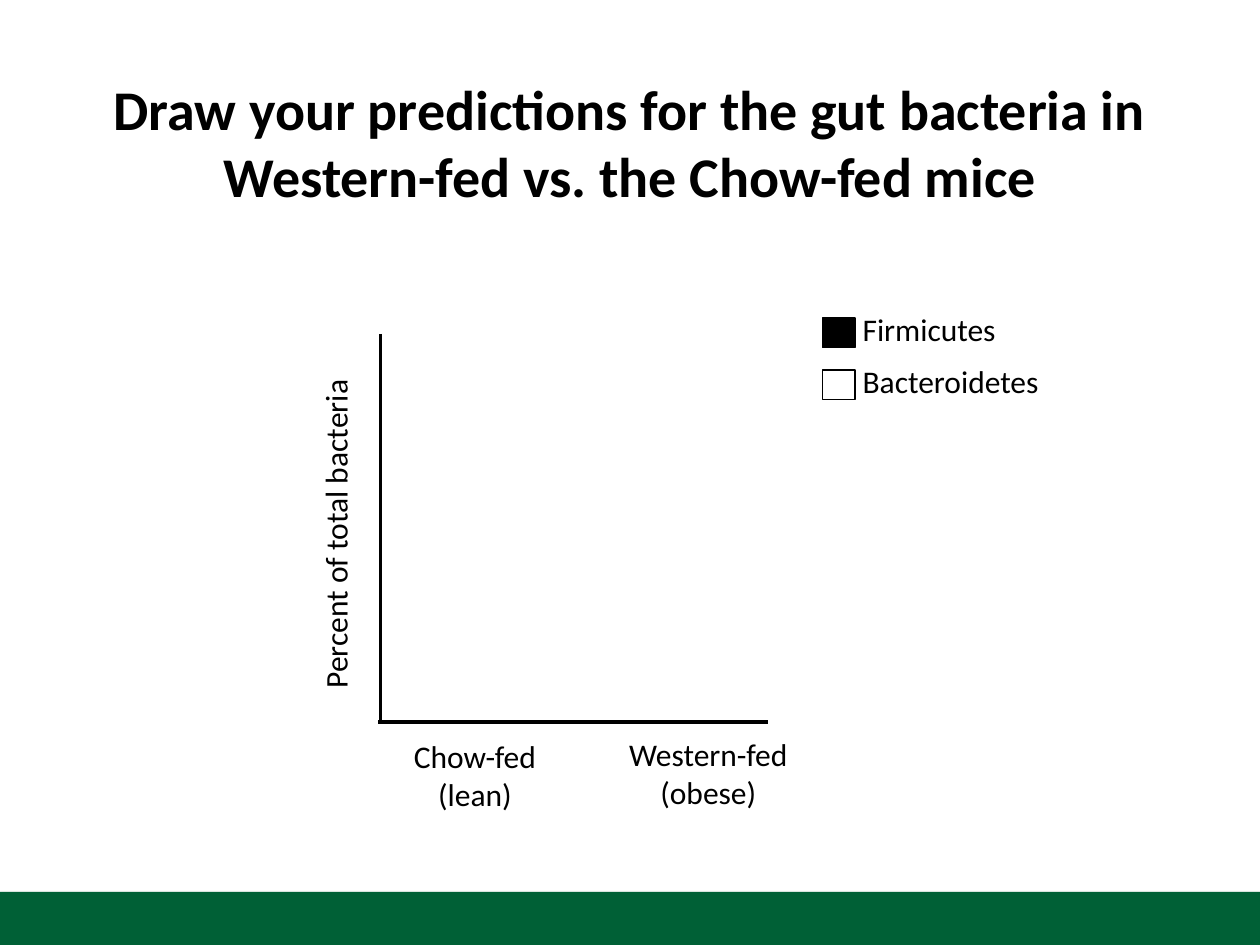
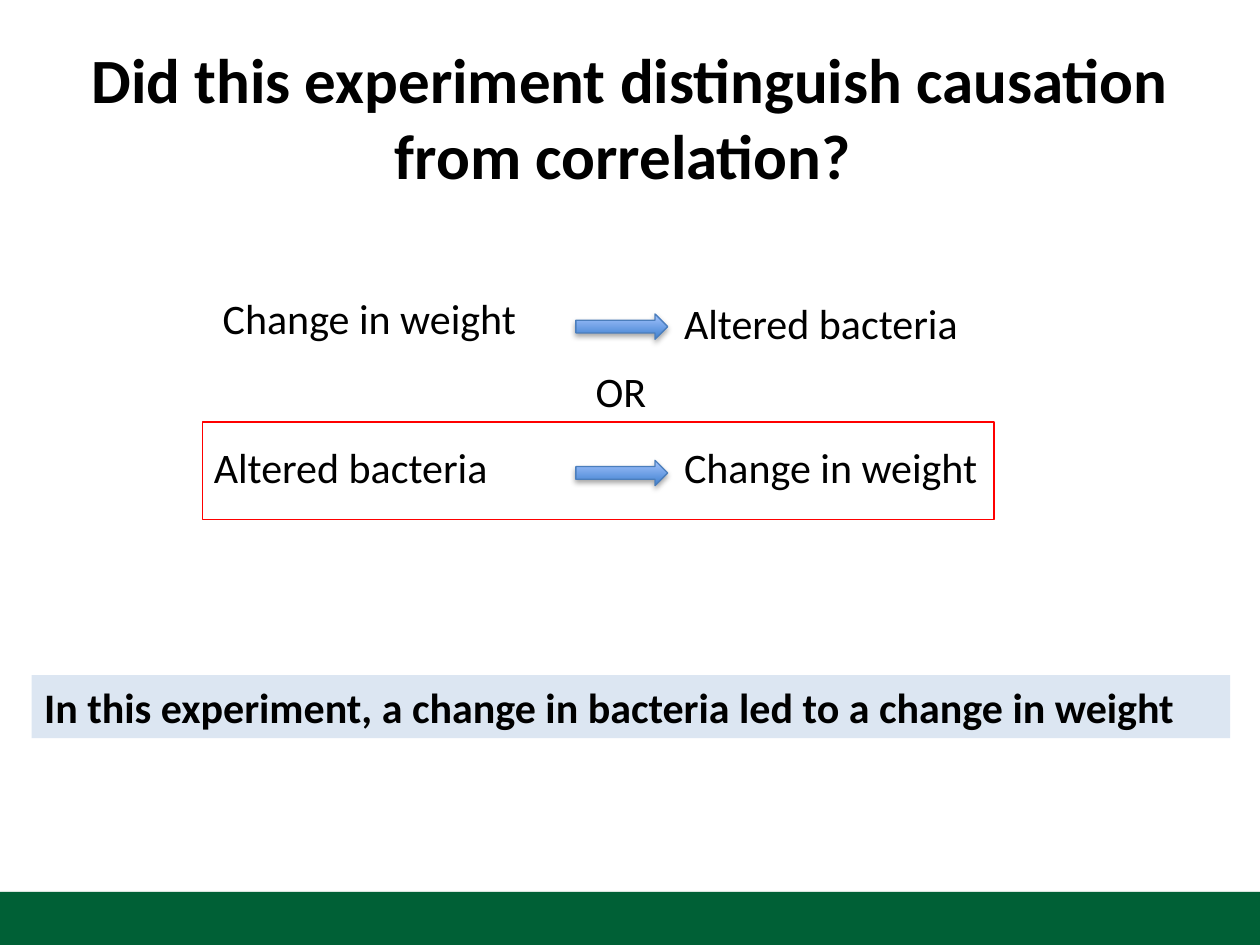
from dataclasses import dataclass

from lxml.etree import SubElement
from pptx import Presentation
from pptx.dml.color import RGBColor
from pptx.enum.shapes import MSO_CONNECTOR, MSO_SHAPE
from pptx.enum.text import MSO_ANCHOR, MSO_AUTO_SIZE, PP_ALIGN
from pptx.oxml.ns import qn
from pptx.util import Cm, Pt

TITLE_ONLY = 5


@dataclass(frozen=True)
class Theme:
    font: str = "Calibri"
    ink: RGBColor = RGBColor(0, 0, 0)
    band: RGBColor = RGBColor(0x00, 0x60, 0x36)
    arrow_dark: RGBColor = RGBColor(0x3F, 0x80, 0xCE)
    arrow_light: RGBColor = RGBColor(0xA4, 0xC4, 0xFF)
    arrow_edge: RGBColor = RGBColor(0x4B, 0x7E, 0xBC)
    highlight: RGBColor = RGBColor(0xFF, 0, 0)
    callout: RGBColor = RGBColor(0xDC, 0xE6, 0xF2)
    label_size: Pt = Pt(18)
    statement_size: Pt = Pt(24)
    thin: Pt = Pt(0.75)
    axis: Pt = Pt(2.25)


THEME = Theme()


@dataclass(frozen=True)
class Box:
    """A rectangle in centimetres."""
    left: float
    top: float
    width: float
    height: float

    def inner(self, left, top, width, height):
        return Box(self.left + left, self.top + top, width, height)

    def lengths(self):
        return Cm(self.left), Cm(self.top), Cm(self.width), Cm(self.height)


def style_text(frame, lines, size, bold=False, align=PP_ALIGN.LEFT):
    frame.text = "\n".join(lines)
    for paragraph in frame.paragraphs:
        paragraph.alignment = align
        font = paragraph.font
        font.name, font.size, font.bold = THEME.font, size, bold
        font.color.rgb = THEME.ink


def add_label(slide, box, *lines, size=THEME.label_size, align=PP_ALIGN.LEFT):
    label = slide.shapes.add_textbox(*box.lengths())
    style_text(label.text_frame, lines, size, align=align)
    label.text_frame.word_wrap = False
    label.text_frame.auto_size = MSO_AUTO_SIZE.SHAPE_TO_FIT_TEXT
    return label


def add_rectangle(slide, box, fill=None, line=None, shadow=False):
    rectangle = slide.shapes.add_shape(MSO_SHAPE.RECTANGLE, *box.lengths())
    if not shadow:
        rectangle.shadow.inherit = False
    if fill is None:
        rectangle.fill.background()
    else:
        rectangle.fill.solid()
        rectangle.fill.fore_color.rgb = fill
    if line is None:
        rectangle.line.fill.background()
    else:
        rectangle.line.color.rgb = line
        rectangle.line.width = THEME.thin
    return rectangle


def add_axis(slide, *ends):
    axis = slide.shapes.add_connector(MSO_CONNECTOR.STRAIGHT, *map(Cm, ends))
    axis.line.color.rgb = THEME.ink
    axis.line.width = THEME.axis
    SubElement(axis.element.spPr, qn("a:effectLst"))


def add_arrow(slide, box):
    arrow = slide.shapes.add_shape(MSO_SHAPE.RIGHT_ARROW, *box.lengths())
    arrow.fill.gradient()
    arrow.fill.gradient_angle = 90
    shades = (THEME.arrow_dark, THEME.arrow_light)
    for stop, shade in zip(arrow.fill.gradient_stops, shades):
        stop.color.rgb = shade
    arrow.line.color.rgb = THEME.arrow_edge
    arrow.line.width = THEME.thin


def add_titled_slide(prs, title, top, size):
    slide = prs.slides.add_slide(prs.slide_layouts[TITLE_ONLY])
    heading = slide.shapes.title
    box = Box(1.27, top, 22.86, 3.18)
    heading.left, heading.top, heading.width, heading.height = box.lengths()
    style_text(heading.text_frame, [title], size, True, PP_ALIGN.CENTER)
    heading.text_frame.vertical_anchor = MSO_ANCHOR.MIDDLE
    return slide


def move_band_to_master(prs, slide):
    """Draw the footer band once, behind everything on the slide master."""
    band = add_rectangle(slide, Box(0, 17.98, 25.4, 1.07), THEME.band, shadow=True)
    prs.slide_master.shapes.element.insert(2, band.element)


def draw_empty_graph(slide, box):
    """Axes along the left and lower edges of the box, with their labels."""
    base = box.top + box.height
    add_axis(slide, box.left, box.top, box.left, base + 0.05)
    add_axis(slide, box.left - 0.05, base, box.left + box.width, base)

    percent = add_label(slide, box.inner(-4.34, 3.46, 6.86, 1.02),
                        "Percent of total bacteria")
    percent.rotation = 270
    diets = [(0.38, 0.18, 3.05, "Chow-fed ", "(lean)"),
             (4.72, 0.15, 3.78, "Western-fed", "(obese)")]
    for left, gap, width, diet, build in diets:
        add_label(slide, box.inner(left, box.height + gap, width, 1.8),
                  diet, build, align=PP_ALIGN.CENTER)


def draw_legend(slide, box):
    entries = [("Firmicutes", THEME.ink, 3.23), ("Bacteroidetes", None, 4.11)]
    pitch = box.height / len(entries)
    for row, (phylum, fill, width) in enumerate(entries):
        top = row * pitch
        add_rectangle(slide, box.inner(0, top + 0.28, 0.66, 0.6), fill, THEME.ink)
        add_label(slide, box.inner(0.56, top, width, 1.02), phylum)


def draw_hypotheses(slide, box):
    """Two cause-and-effect rows with OR between; the second one is framed."""
    weight, bacteria = ("Change in weight", 6.5), ("Altered bacteria", 6.12)
    rows = [(0, 0.18, 0.1, weight, bacteria),
            (3, 0, 0, bacteria, weight)]
    for top, cause_left, effect_drop, cause, effect in rows:
        for left, drop, (text, width) in ((cause_left, 0, cause),
                                          (9.48, effect_drop, effect)):
            add_label(slide, box.inner(left, top + drop, width, 1.27), text,
                      size=THEME.statement_size)
        add_arrow(slide, box.inner(7.55, top + 0.51 + effect_drop / 2, 1.85, 0.51))
    add_label(slide, box.inner(7.7, 1.47, 1.55, 1.27), "OR",
              size=THEME.statement_size)
    add_rectangle(slide, box.inner(0.03, 2.74, box.width, 1.96),
                  line=THEME.highlight)


def draw_conclusion(slide, box, text):
    callout = add_rectangle(slide, box, THEME.callout)
    style_text(callout.text_frame, [text], THEME.statement_size, bold=True)
    callout.text_frame.vertical_anchor = MSO_ANCHOR.TOP


def build_prediction_slide(prs):
    slide = add_titled_slide(
        prs, "Draw your predictions for the gut bacteria in "
        "Western-fed vs. the Chow-fed mice", 1.27, Pt(32))
    draw_empty_graph(slide, Box(7.67, 6.73, 7.82, 7.82))
    draw_legend(slide, Box(16.58, 6.13, 4.67, 2.1))
    return slide


def build_causation_slide(prs):
    slide = add_titled_slide(
        prs, "Did this experiment distinguish causation from correlation? ",
        0.76, Pt(36))
    draw_hypotheses(slide, Box(4.06, 5.77, 15.95, 4.7))
    draw_conclusion(
        slide, Box(0.64, 13.61, 24.16, 1.27),
        "In this experiment, a change in bacteria led to a change in weight")


def main():
    prs = Presentation()
    prs.slide_width, prs.slide_height = Cm(25.4), Cm(19.05)
    move_band_to_master(prs, build_prediction_slide(prs))
    build_causation_slide(prs)
    prs.save("out.pptx")


if __name__ == "__main__":
    main()
